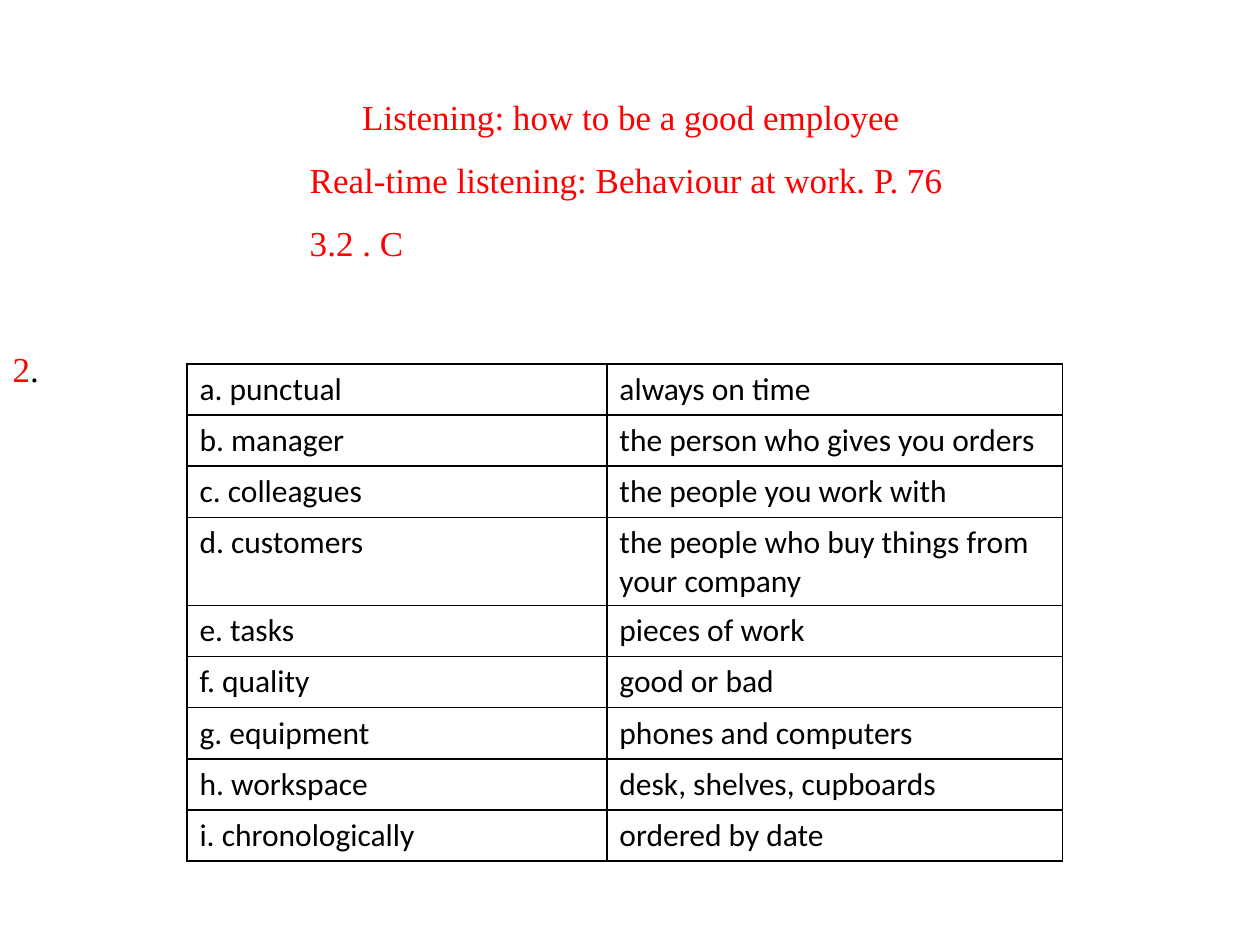
from dataclasses import dataclass
from typing import NamedTuple

from lxml.etree import SubElement
from pptx import Presentation
from pptx.dml.color import RGBColor as Rgb
from pptx.oxml.ns import qn
from pptx.util import Length, Pt


@dataclass(frozen=True)
class Theme:
    red: Rgb = Rgb(0xFF, 0, 0)
    black: Rgb = Rgb(0, 0, 0)
    white: Rgb = Rgb(0xFF, 0xFF, 0xFF)
    heading_font: str = "Times New Roman"
    table_font: str = "Calibri"
    heading_size: Length = Pt(20)
    table_size: Length = Pt(18)
    line_pitch: Length = Pt(36)
    border: Length = Pt(1)


class Span(NamedTuple):
    text: str
    color: Rgb


class Line(NamedTuple):
    spans: list[Span]
    indent: Length = Pt(0)


class Entry(NamedTuple):
    term: str
    meaning: str


THEME = Theme()
HEADING = [
    Line([Span("Listening: how to be a good employee", THEME.red)], Pt(30)),
    Line([Span("Real-time listening: Behaviour at work. P. 76", THEME.red)]),
    Line([Span("3.2 . C", THEME.red)]),
]
TASK_NUMBER = [Line([Span("2", THEME.red), Span(".", THEME.black)])]
GLOSSARY = [
    Entry("a. punctual", "always on time"),
    Entry("b. manager", "the person who gives you orders"),
    Entry("c. colleagues", "the people you work with"),
    Entry("d. customers", "the people who buy things from your company"),
    Entry("e. tasks", "pieces of work"),
    Entry("f. quality", "good or bad"),
    Entry("g. equipment", "phones and computers"),
    Entry("h. workspace", "desk, shelves, cupboards"),
    Entry("i. chronologically", "ordered by date"),
]
COLUMN_WIDTHS = [Pt(240), Pt(260.5)]
ROW_HEIGHT = Pt(29.2)


def set_format(target, values: dict) -> None:
    for attribute, value in values.items():
        setattr(target, attribute, value)


def add_lines(slide, lines: list[Line], left: Length, top: Length, width: Length) -> None:
    frame = slide.shapes.add_textbox(left, top, width, THEME.line_pitch * len(lines)).text_frame
    set_format(frame, dict(word_wrap=True, margin_left=Pt(0), margin_right=Pt(0),
                           margin_top=Pt(0), margin_bottom=Pt(0)))
    for index, line in enumerate(lines):
        paragraph = frame.add_paragraph() if index else frame.paragraphs[0]
        paragraph.line_spacing = THEME.line_pitch
        if line.indent:
            paragraph._p.get_or_add_pPr().set("marL", str(line.indent))
        for span in line.spans:
            run = paragraph.add_run()
            run.text = span.text
            set_format(run.font, dict(name=THEME.heading_font, size=THEME.heading_size))
            run.font.color.rgb = span.color


def add_borders(cell) -> None:
    """Outline all four sides; borders must come before the cell's fill."""
    properties = cell._tc.get_or_add_tcPr()
    for side in ("a:lnL", "a:lnR", "a:lnT", "a:lnB"):
        edge = SubElement(properties, qn(side), w=str(THEME.border))
        SubElement(SubElement(edge, qn("a:solidFill")), qn("a:srgbClr"), val=str(THEME.black))


def fill_cell(cell, text: str) -> None:
    add_borders(cell)
    cell.fill.solid()
    cell.fill.fore_color.rgb = THEME.white
    run = cell.text_frame.paragraphs[0].add_run()
    run.text = text
    set_format(run.font, dict(name=THEME.table_font, size=THEME.table_size, bold=False))
    run.font.color.rgb = THEME.black


def add_glossary(slide, entries: list[Entry], left: Length, top: Length) -> None:
    table = slide.shapes.add_table(len(entries), len(COLUMN_WIDTHS), left, top,
                                   sum(COLUMN_WIDTHS), ROW_HEIGHT * len(entries)).table
    set_format(table, dict(first_row=False, horz_banding=False))
    for column, width in zip(table.columns, COLUMN_WIDTHS):
        column.width = width
    for row, entry in zip(table.rows, entries):
        row.height = ROW_HEIGHT
        for cell, text in zip(row.cells, entry):
            fill_cell(cell, text)


def main() -> None:
    presentation = Presentation()
    set_format(presentation, dict(slide_width=Pt(720), slide_height=Pt(540)))
    slide = presentation.slides.add_slide(presentation.slide_layouts[6])
    add_lines(slide, HEADING, Pt(177), Pt(42.6), Pt(400))
    add_lines(slide, TASK_NUMBER, Pt(7.2), Pt(186.6), Pt(60))
    add_glossary(slide, GLOSSARY, Pt(106.8), Pt(208))
    presentation.save("out.pptx")


if __name__ == "__main__":
    main()
